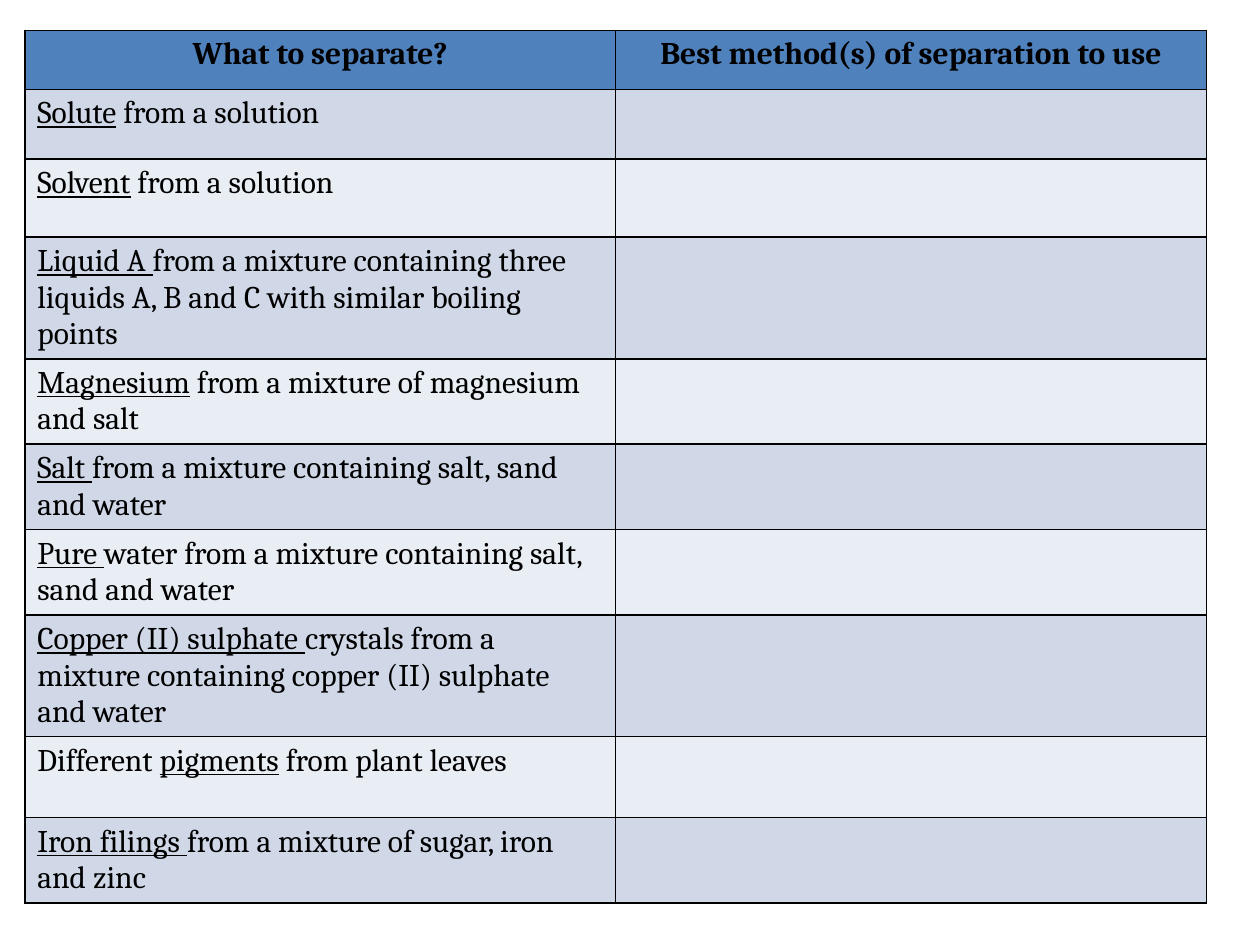
import pptx
import pptx.dml.color
import pptx.enum.text
import pptx.oxml
import pptx.oxml.ns
import pptx.util
from pptx.util import Cm

RGB = pptx.dml.color.RGBColor
BLACK = RGB(0x00, 0x00, 0x00)
BLUE = RGB(0x4F, 0x81, 0xBD)
BANDS = [RGB(0xD0, 0xD8, 0xE8), RGB(0xE9, 0xED, 0xF4)]
FONT = "Cambria"

HEADS = ["What to separate?", "Best method(s) of separation to use"]
HEAD_H = 1.19
TASKS = [
    (1.41, "", "Solute", " from a solution"),
    (1.57, "", "Solvent", " from a solution"),
    (1.78, "", "Liquid A ", "from a mixture containing three liquids A, B and C "
                            "with similar boiling points"),
    (1.68, "", "Magnesium", " from a mixture of magnesium and salt"),
    (1.68, "", "Salt ", "from a mixture containing salt, sand and water"),
    (1.68, "", "Pure ", "water from a mixture containing salt, sand and water"),
    (2.11, "", "Copper (II) sulphate ", "crystals from a mixture containing "
                                        "copper (II) sulphate and water"),
    (1.63, "Different ", "pigments", " from plant leaves"),
    (1.37, "", "Iron filings ", "from a mixture of sugar, iron and zinc"),
]
LEFT, TOP, COL_W = 0.5, 0.61, 11.91


def paint(cell, fill):
    props = cell._tc.get_or_add_tcPr()
    for side in "LRTB":
        props.append(pptx.oxml.parse_xml(
            f'<a:ln{side} {pptx.oxml.ns.nsdecls("a")} w="12700"><a:solidFill>'
            f'<a:srgbClr val="{BLACK}"/></a:solidFill></a:ln{side}>'))
    cell.fill.solid()
    cell.fill.fore_color.rgb = fill


def write(para, text, bold=False, under=False):
    run = para.add_run()
    run.text = text
    font = run.font
    font.name, font.size = FONT, pptx.util.Pt(18)
    font.bold, font.underline = bold, under
    font.color.rgb = BLACK


def main():
    deck = pptx.Presentation()
    deck.slide_width, deck.slide_height = Cm(25.4), Cm(19.05)
    slide = deck.slides.add_slide(deck.slide_layouts[6])
    highs = [HEAD_H] + [task[0] for task in TASKS]
    table = slide.shapes.add_table(
        len(highs), len(HEADS), Cm(LEFT), Cm(TOP),
        Cm(COL_W * len(HEADS)), Cm(sum(highs))).table
    for col in table.columns:
        col.width = Cm(COL_W)
    for row, high in zip(table.rows, highs):
        row.height = Cm(high)

    for cell, head in zip(table.rows[0].cells, HEADS):
        paint(cell, BLUE)
        para = cell.text_frame.paragraphs[0]
        para.alignment = pptx.enum.text.PP_ALIGN.CENTER
        write(para, head, bold=True)

    for i, (_, pre, key, post) in enumerate(TASKS):
        cells = table.rows[i + 1].cells
        for cell in cells:
            paint(cell, BANDS[i % 2])
        para = cells[0].text_frame.paragraphs[0]
        for text in filter(None, (pre, key, post)):
            write(para, text, under=text == key)

    deck.save("out.pptx")


if __name__ == "__main__":
    main()
